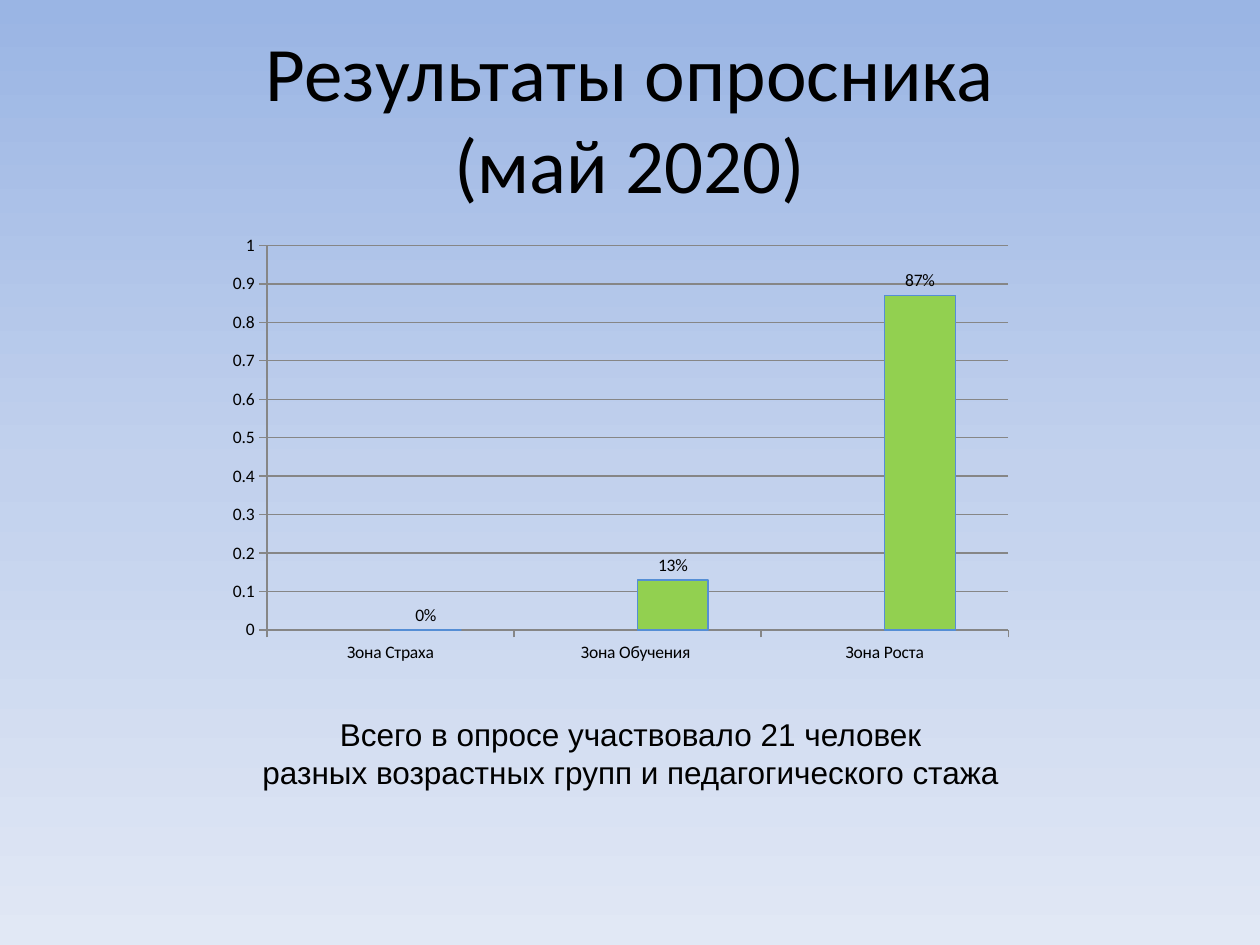
"""Builds the survey results slide with a column chart."""
from copy import deepcopy

from pptx import Presentation
from pptx.chart.data import CategoryChartData
from pptx.dml.color import RGBColor as Rgb
from pptx.enum.chart import XL_CHART_TYPE as Kind, XL_LABEL_POSITION as Spot, XL_TICK_MARK as Tick
from pptx.enum.text import MSO_ANCHOR as Anchor, PP_ALIGN as Align
from pptx.oxml.ns import qn
from pptx.util import Inches, Pt

TITLE = [["Результаты опросника", "(май 2020)"]]
NOTE = [["Всего в опросе участвовало 21 человек "],
        ["разных возрастных групп и педагогического стажа "]]
ZONES = ["Зона Страха", "Зона Обучения ", "Зона Роста"]
SERIES = [("Series 1", [None, None, None], "blue"),
          ("Series 2", [0, 0.13, 0.87], "green")]
COLORS = {"ink": "000000", "blue": "4F81BD", "green": "92D050", "edge": "558ED5",
          "grid": "868686", "top": "9AB5E4", "mid": "C2D1ED", "low": "E1E8F5"}
STOPS = [("top", 0), ("mid", 0.5), ("low", 1)]
WIDE, HIGH = 10, 7.5
BOXES = {"title": (0.05, 0.04, 0.9, 0.167),
         "chart": (0.172, 0.24, 0.641, 0.47),
         "note": (0.195, 0.75, 0.618, 0.094)}


def hue(name):
    return Rgb.from_string(COLORS[name])


def place(name):
    x, y, w, h = BOXES[name]
    return [Inches(n) for n in (x * WIDE, y * HIGH, w * WIDE, h * HIGH)]


def style(font, face, size):
    font.name, font.size = face, Pt(size)
    font.color.rgb = hue("ink")


def paint(slide):
    fill = slide.background.fill
    fill.gradient()
    fill.gradient_angle = 270
    row = slide.element.find(".//" + qn("a:gsLst"))
    row.append(deepcopy(row[-1]))
    for stop, (name, pos) in zip(fill.gradient_stops, STOPS):
        stop.color.rgb = hue(name)
        stop.position = pos


def write(slide, name, paras, face, size, anchor, wrap):
    frame = slide.shapes.add_textbox(*place(name)).text_frame
    frame.word_wrap, frame.vertical_anchor = wrap, anchor
    for i, lines in enumerate(paras):
        para = frame.add_paragraph() if i else frame.paragraphs[0]
        para.alignment = Align.CENTER
        for j, line in enumerate(lines):
            if j:
                para.add_line_break()
            run = para.add_run()
            run.text = line
            style(run.font, face, size)


def plot(slide):
    data = CategoryChartData()
    data.categories = ZONES
    for name, vals, _ in SERIES:
        data.add_series(name, vals)
    chart = slide.shapes.add_chart(Kind.COLUMN_CLUSTERED, *place("chart"), data).chart
    chart.has_legend = chart.has_title = False
    style(chart.font, "Calibri", 10)
    bars = chart.plots[0]
    bars.gap_width, bars.overlap, bars.vary_by_categories = 150, 0, False
    for bar, (_, _, tint) in zip(bars.series, SERIES):
        bar.format.fill.solid()
        bar.format.fill.fore_color.rgb = hue(tint)
    edge = bar.format.line
    edge.color.rgb, edge.width = hue("edge"), Pt(0.75)
    tags = bar.data_labels
    tags.show_value, tags.position = True, Spot.OUTSIDE_END
    tags.number_format, tags.number_format_is_linked = "0%", False
    style(tags.font, "Calibri", 10)
    axis = chart.value_axis
    axis.minimum_scale, axis.maximum_scale, axis.major_unit = 0, 1, 0.1
    axis.has_major_gridlines = True
    for item in (axis, chart.category_axis):
        item.major_tick_mark = Tick.OUTSIDE
    for part in (axis, chart.category_axis, axis.major_gridlines):
        part.format.line.color.rgb = hue("grid")
        part.format.line.width = Pt(0.75)


def main():
    deck = Presentation()
    deck.slide_width, deck.slide_height = Inches(WIDE), Inches(HIGH)
    slide = deck.slides.add_slide(deck.slide_layouts[6])
    paint(slide)
    write(slide, "title", TITLE, "Calibri", 44, Anchor.MIDDLE, True)
    plot(slide)
    write(slide, "note", NOTE, "Arial", 18, Anchor.TOP, False)
    deck.save("out.pptx")


if __name__ == "__main__":
    main()
